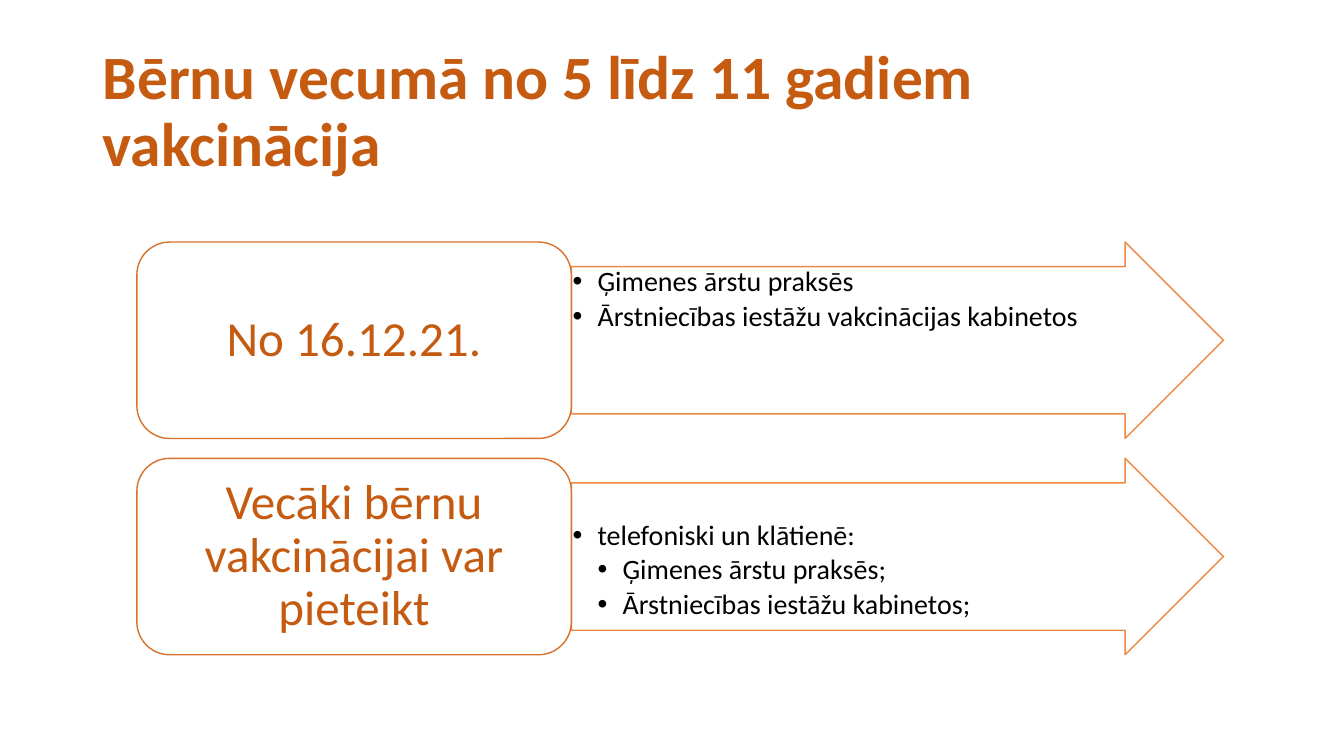
from lxml import etree
from pptx import Presentation
from pptx.dml.color import RGBColor
from pptx.enum.shapes import MSO_SHAPE
from pptx.enum.text import MSO_ANCHOR, MSO_AUTO_SIZE, PP_ALIGN
from pptx.oxml.ns import qn
from pptx.util import Cm, Pt

ARROW, ROUNDED = MSO_SHAPE.RIGHT_ARROW, MSO_SHAPE.ROUNDED_RECTANGLE
TOP, MIDDLE = MSO_ANCHOR.TOP, MSO_ANCHOR.MIDDLE
LEFT, CENTER = PP_ALIGN.LEFT, PP_ALIGN.CENTER
NO_FIT = MSO_AUTO_SIZE.NONE
COLORS = {"text": "000000", "accent": "C55A11", "arrow": "ED7D31",
          "box": "D7712C", "white": "FFFFFF"}
FONT = "Calibri"
ROW_TOP, ROW_STEP, ROW_HEIGHT = 6.1, 5.45, 4.95
BOX_LEFT, BOX_WIDTH, ARROW_WIDTH = 3.45, 10.95, 16.43
BULLET_INDENT = 0.63
ROWS = [
    ("No 16.12.21.", 0.03,
     [(0, "Ģimenes ārstu praksēs"),
      (0, "Ārstniecības iestāžu vakcinācijas kabinetos")]),
    ("Vecāki bērnu vakcinācijai var pieteikt", 0.97,
     [(0, "telefoniski un klātienē:"),
      (1, "Ģimenes ārstu praksēs;"),
      (1, "Ārstniecības iestāžu kabinetos;")]),
]


def set_attrs(obj, **values):
    """Set every given value as an attribute of the object."""
    for name, value in values.items():
        setattr(obj, name, value)


def rgb(name):
    """Return the named colour."""
    return RGBColor.from_string(COLORS[name])


class SlideBuilder:
    """Hold the style and the current slide."""

    def __init__(self, prs):
        """Add a slide with a title."""
        self.slide = prs.slides.add_slide(prs.slide_layouts[5])

    def fill_text(self, p, text, size, color, bold=False, **layout):
        """Fill one paragraph with formatted text."""
        set_attrs(p, line_spacing=0.9, **layout)
        r = p.add_run()
        r.text = text
        set_attrs(r.font, name=FONT, size=Pt(size), bold=bold)
        r.font.color.rgb = rgb(color)

    def title(self, text):
        """Place and format the title."""
        sp = self.slide.shapes.title
        set_attrs(sp, left=Cm(2.33), top=Cm(1.01), width=Cm(29.21), height=Cm(3.68))
        tf = sp.text_frame
        set_attrs(tf, word_wrap=True, auto_size=NO_FIT, vertical_anchor=MIDDLE)
        self.fill_text(tf.paragraphs[0], text, 44, "accent", True, alignment=LEFT)

    def shape(self, kind, left, top, width, line, margins, anchor):
        """Add a white outlined shape ready for text."""
        sp = self.slide.shapes.add_shape(
            kind, Cm(left), Cm(top), Cm(width), Cm(ROW_HEIGHT))
        sp.shadow.inherit = False
        sp.fill.solid()
        sp.fill.fore_color.rgb = rgb("white")
        sp.line.color.rgb = rgb(line)
        sp.line.width = Pt(1)
        sides = ("margin_left", "margin_top", "margin_right", "margin_bottom")
        set_attrs(sp.text_frame, word_wrap=True, vertical_anchor=anchor,
                  **{side: Cm(m) for side, m in zip(sides, margins)})
        return sp

    def arrow(self, top, margin_top, items):
        """Add a translucent arrow holding a bulleted list."""
        sp = self.shape(ARROW, BOX_LEFT + BOX_WIDTH, top, ARROW_WIDTH, "arrow",
                        (0.03, margin_top, 0.03, 0.03), TOP)
        sp.adjustments[0], sp.adjustments[1] = 0.75, 0.5
        for color in sp._element.spPr.iter(qn("a:srgbClr")):
            etree.SubElement(color, qn("a:alpha"), val="90000")
        tf = sp.text_frame
        for i, (level, text) in enumerate(items):
            p = tf.add_paragraph() if i else tf.paragraphs[0]
            self.fill_text(p, text, 20, "text", alignment=LEFT, level=level,
                           space_after=Pt(3))
            pPr = p._p.get_or_add_pPr()
            pPr.set("marL", str(Cm(BULLET_INDENT * (level + 1))))
            pPr.set("indent", str(-Cm(BULLET_INDENT)))
            etree.SubElement(pPr, qn("a:buFont"), typeface="Arial")
            etree.SubElement(pPr, qn("a:buChar"), char="•")

    def box(self, top, text):
        """Add a rounded box with a centred heading."""
        sp = self.shape(ROUNDED, BOX_LEFT, top, BOX_WIDTH, "box",
                        (0.38, 0.18, 0.38, 0.18), MIDDLE)
        self.fill_text(sp.text_frame.paragraphs[0], text, 35, "accent",
                       alignment=CENTER)


def main():
    """Build and save the slide."""
    prs = Presentation()
    set_attrs(prs, slide_width=Cm(33.87), slide_height=Cm(19.05))
    s = SlideBuilder(prs)
    s.title("Bērnu vecumā no 5 līdz 11 gadiem vakcinācija")
    for i, (heading, margin_top, items) in enumerate(ROWS):
        top = ROW_TOP + i * ROW_STEP
        s.arrow(top, margin_top, items)
        s.box(top, heading)
    prs.save("out.pptx")


if __name__ == "__main__":
    main()
